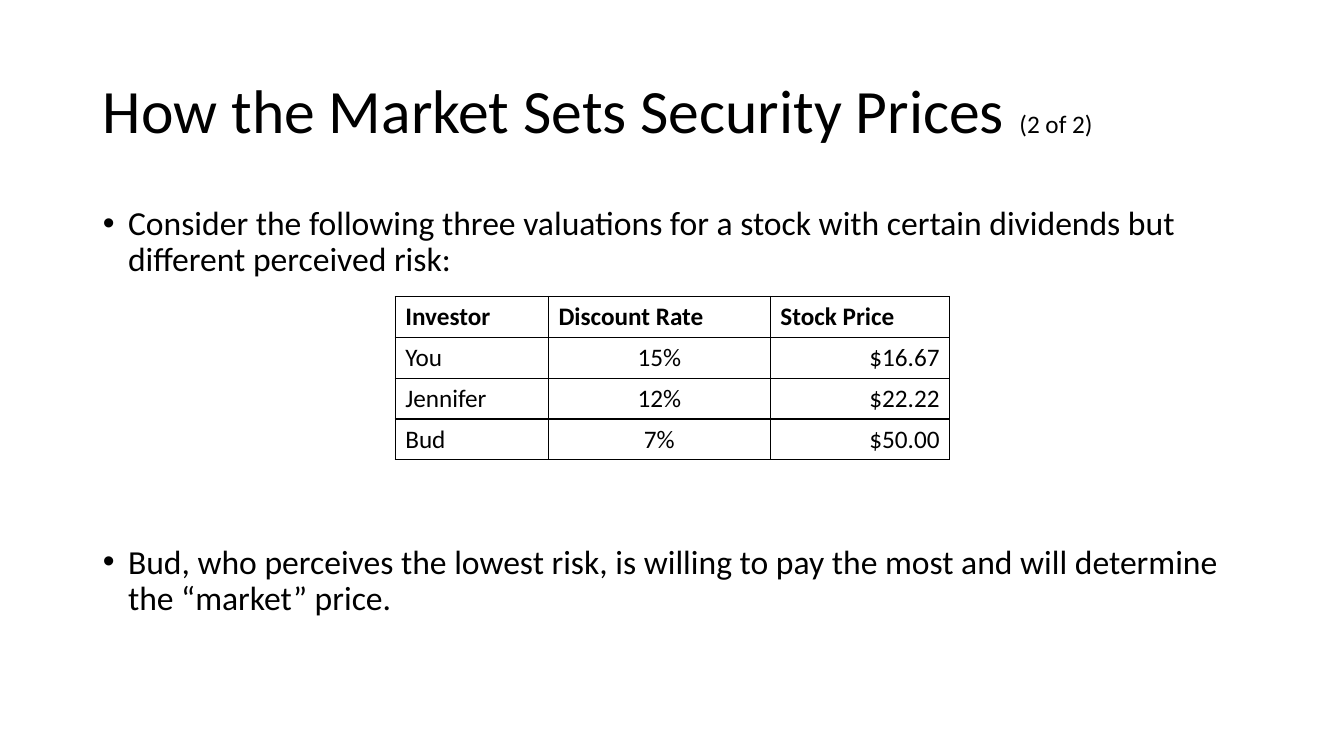
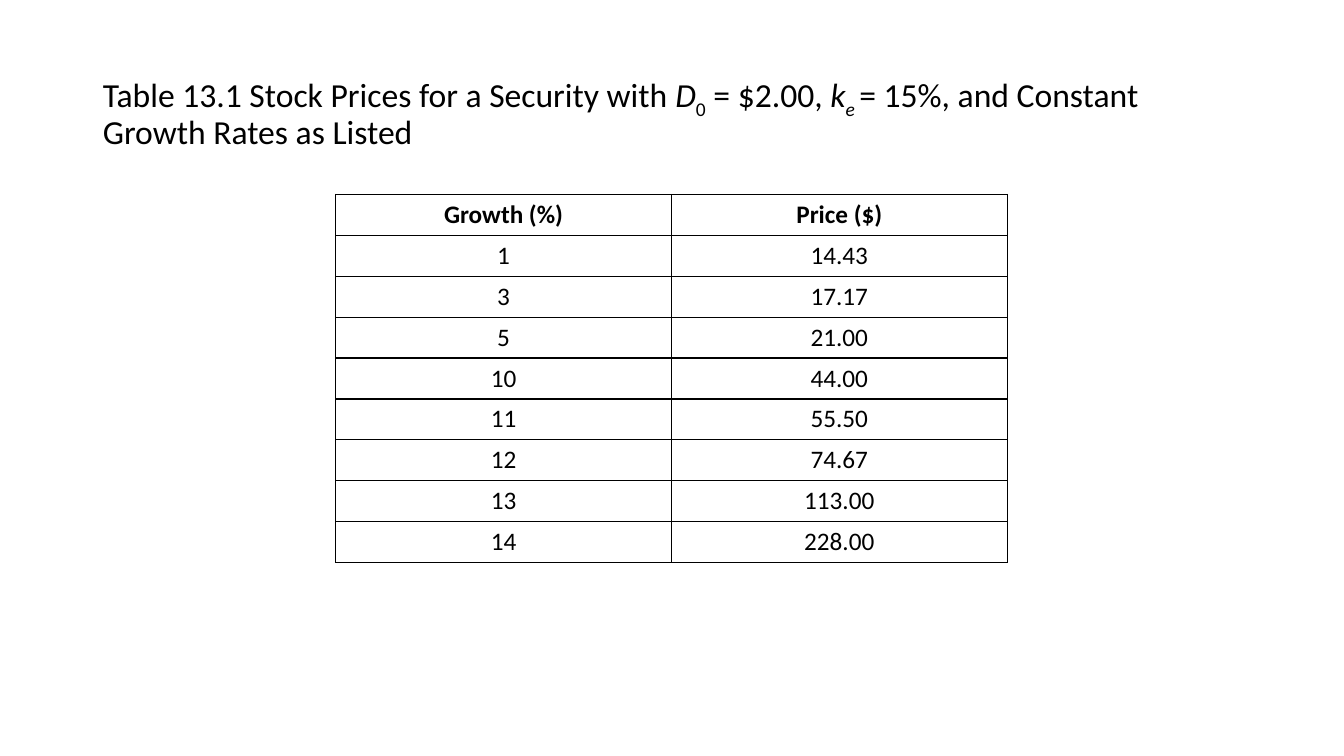
from dataclasses import dataclass

from lxml import etree
from pptx import Presentation
from pptx.dml.color import RGBColor
from pptx.enum import text as t
from pptx.oxml import ns
from pptx.util import Inches, Pt

# Shared style
COLORS = {"ink": "000000", "paper": "FFFFFF"}
FONT = "Calibri"
TABLE_GRID_STYLE = "{5940675A-B579-460E-94D1-54222C63F5DA}"
MARGIN, CONTENT_WIDTH = 0.92, 11.5
BULLET_INDENT = 0.25
LEFT, CENTER, RIGHT = t.PP_ALIGN.LEFT, t.PP_ALIGN.CENTER, t.PP_ALIGN.RIGHT


@dataclass(frozen=True)
class Span:
    text: str
    size: int = 24
    italic: bool = False
    subscript: bool = False


@dataclass(frozen=True)
class Bullet:
    text: str
    space_before: int = 10


@dataclass(frozen=True)
class Column:
    heading: str
    width: float
    values: tuple[str, ...]
    align: t.PP_ALIGN = CENTER
    heading_align: t.PP_ALIGN = CENTER


def style_paragraph(paragraph, size: int | None = None, align=LEFT, bold: bool = False) -> None:
    paragraph.alignment = align
    font = paragraph.font
    font.name, font.bold = FONT, bold
    font.color.rgb = RGBColor.from_string(COLORS["ink"])
    if size:
        font.size = Pt(size)


def place(placeholder, top: float, height: float, anchor):
    placeholder.left, placeholder.top = Inches(MARGIN), Inches(top)
    placeholder.width, placeholder.height = Inches(CONTENT_WIDTH), Inches(height)
    frame = placeholder.text_frame
    frame.word_wrap = True
    frame.auto_size = t.MSO_AUTO_SIZE.NONE
    frame.vertical_anchor = anchor
    return frame


def add_slide(prs, layout: int, title: list[Span]):
    slide = prs.slides.add_slide(prs.slide_layouts[layout])
    slide.background.fill.solid()
    slide.background.fill.fore_color.rgb = RGBColor.from_string(COLORS["paper"])
    frame = place(slide.shapes.title, 0.4, 1.45, t.MSO_ANCHOR.MIDDLE)
    heading = frame.paragraphs[0]
    heading.line_spacing = 0.9
    style_paragraph(heading)
    for span in title:
        run = heading.add_run()
        run.text = span.text
        run.font.size = Pt(span.size)
        run.font.italic = span.italic
        if span.subscript:
            run._r.get_or_add_rPr().set("baseline", "-25000")
    return slide


def add_bullets(slide, bullets: list[Bullet]) -> None:
    frame = place(slide.placeholders[1], 2, 4.76, t.MSO_ANCHOR.TOP)
    for index, bullet in enumerate(bullets):
        paragraph = frame.add_paragraph() if index else frame.paragraphs[0]
        paragraph.text = bullet.text
        paragraph.line_spacing = 0.9
        paragraph.space_before = Pt(bullet.space_before)
        style_paragraph(paragraph, 24)
        props = paragraph._p.get_or_add_pPr()
        props.set("marL", str(Inches(BULLET_INDENT)))
        props.set("indent", str(-Inches(BULLET_INDENT)))


def add_borders(cell) -> None:
    props = cell._tc.get_or_add_tcPr()
    for index, side in enumerate(("lnL", "lnR", "lnT", "lnB")):
        line = etree.Element(ns.qn(f"a:{side}"), w=str(Pt(1)))
        fill = etree.SubElement(line, ns.qn("a:solidFill"))
        etree.SubElement(fill, ns.qn("a:srgbClr"), val=COLORS["ink"])
        props.insert(index, line)


def add_grid(slide, left: float, top: float, height: float, columns: list[Column]) -> None:
    width = sum(column.width for column in columns)
    rows = len(columns[0].values) + 1
    table = slide.shapes.add_table(
        rows, len(columns), Inches(left), Inches(top), Inches(width), Inches(height)
    ).table
    table.horz_banding = False
    table._tbl.tblPr.find(ns.qn("a:tableStyleId")).text = TABLE_GRID_STYLE
    for c, column in enumerate(columns):
        table.columns[c].width = Inches(column.width)
        for r, value in enumerate((column.heading, *column.values)):
            is_heading = r == 0
            cell = table.cell(r, c)
            cell.text = value
            cell.fill.background()
            align = column.heading_align if is_heading else column.align
            style_paragraph(cell.text_frame.paragraphs[0], 18, align, is_heading)
            add_borders(cell)


def main() -> None:
    prs = Presentation()
    prs.slide_width, prs.slide_height = Inches(13.33), Inches(7.5)

    # Three investors' valuations
    valuations = add_slide(prs, 1, [
        Span("How the Market Sets Security Prices ", 44),
        Span("(2 of 2)", 18),
    ])
    add_bullets(valuations, [
        Bullet("Consider the following three valuations for a stock with certain "
               "dividends but different perceived risk:"),
        Bullet("Bud, who perceives the lowest risk, is willing to pay the most and "
               "will determine the “market” price.", space_before=190),
    ])
    add_grid(valuations, 3.92, 2.94, 1.62, [
        Column("Investor", 1.52, ("You", "Jennifer", "Bud"), LEFT, LEFT),
        Column("Discount Rate", 2.2, ("15%", "12%", "7%"), CENTER, LEFT),
        Column("Stock Price", 1.78, ("$16.67", "$22.22", "$50.00"), RIGHT, LEFT),
    ])

    # Price by growth rate
    growth = add_slide(prs, 5, [
        Span("Table 13.1 Stock Prices for a Security with "),
        Span("D", italic=True),
        Span("0", subscript=True),
        Span(" = $2.00, "),
        Span("k", italic=True),
        Span("e ", italic=True, subscript=True),
        Span("= 15%, and Constant Growth Rates as Listed"),
    ])
    add_grid(growth, 3.33, 1.93, 3.65, [
        Column("Growth (%)", 3.33, ("1", "3", "5", "10", "11", "12", "13", "14")),
        Column("Price ($)", 3.33, ("14.43", "17.17", "21.00", "44.00", "55.50",
                                   "74.67", "113.00", "228.00")),
    ])

    prs.save("out.pptx")


if __name__ == "__main__":
    main()
